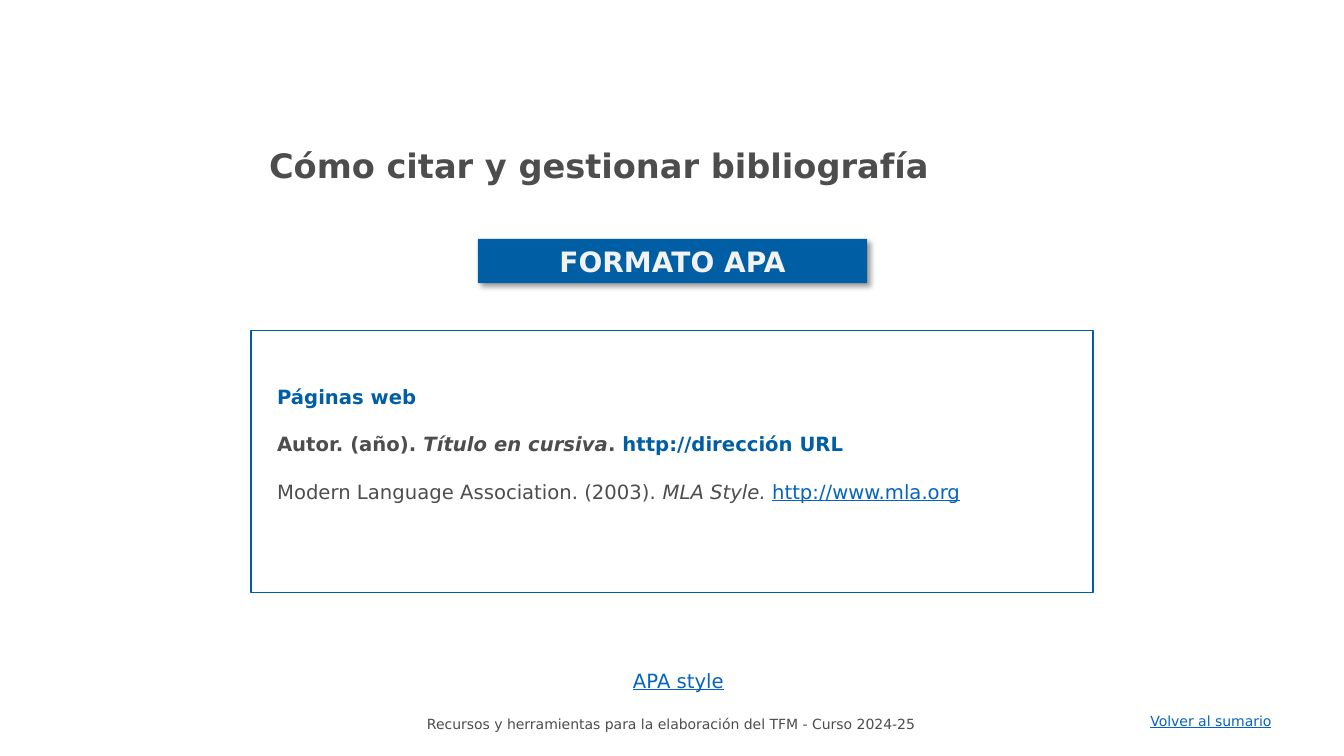
"""Build the slide on citing web pages in APA format."""
from dataclasses import dataclass

from lxml.etree import SubElement
from pptx import Presentation
from pptx.dml.color import RGBColor as Color
from pptx.enum.shapes import MSO_SHAPE as ShapeKind
from pptx.enum.text import MSO_ANCHOR as Anchor, PP_ALIGN as Align
from pptx.oxml.ns import qn
from pptx.shapes.autoshape import Shape
from pptx.slide import Slide
from pptx.util import Inches, Pt

WIDTH, HEIGHT = Inches(13.33), Inches(7.5)


@dataclass(frozen=True)
class Theme:
    font: str = "DejaVu Sans"
    blue: str = "005EA4"
    gray: str = "4D4D4D"
    link: str = "0563C1"
    pale: str = "F2F2F2"
    shadow: str = "000000"
    title: int = 24
    banner: int = 20
    body: int = 14
    small: int = 10
    gap: int = 17


THEME = Theme()


@dataclass(frozen=True)
class Area:
    """A rectangle in percent of the slide's width and height."""
    left: float
    top: float
    width: float
    height: float

    def box(self) -> tuple[int, int, int, int]:
        return (round(WIDTH * self.left / 100), round(HEIGHT * self.top / 100),
                round(WIDTH * self.width / 100), round(HEIGHT * self.height / 100))


@dataclass(frozen=True)
class Span:
    text: str
    color: str = THEME.gray
    bold: bool = False
    italic: bool = False
    underline: bool = False


@dataclass(frozen=True)
class TextBlock:
    area: Area
    size: int
    paragraphs: list[list[Span]]
    align: Align = Align.LEFT
    wrap: bool = True


FRAME = Area(18.68, 43.73, 62.64, 34.67)
BANNER = TextBlock(Area(35.56, 31.6, 28.96, 5.87), THEME.banner,
                   [[Span("FORMATO APA", THEME.pale, bold=True)]], Align.CENTER)
BLOCKS = [
    TextBlock(Area(20.1, 94, 59.64, 3.6), THEME.small,
              [[Span("Recursos y herramientas para la elaboración del TFM - Curso 2024-25")]],
              Align.CENTER),
    TextBlock(Area(84.85, 93.6, 10.8, 3.6), THEME.small,
              [[Span("Volver al sumario", THEME.link, underline=True)]], wrap=False),
    TextBlock(Area(19.88, 50.27, 60.24, 17.07), THEME.body, [
        [Span("Páginas web", THEME.blue, bold=True)],
        [Span("Autor. (año). ", bold=True),
         Span("Título en cursiva", bold=True, italic=True),
         Span(". ", bold=True),
         Span("http://dirección URL", THEME.blue, bold=True)],
        [Span("Modern Language Association. (2003). "),
         Span("MLA Style. ", italic=True),
         Span("http://www.mla.org", THEME.link, underline=True)],
    ]),
    TextBlock(Area(46.36, 87.87, 8.4, 4.53), THEME.body,
              [[Span("APA style", THEME.link, underline=True)]], wrap=False),
    TextBlock(Area(19.28, 18.53, 62.64, 6.67), THEME.title,
              [[Span("Cómo citar y gestionar bibliografía", bold=True)]]),
]


def write_text(shape: Shape, block: TextBlock) -> None:
    frame = shape.text_frame
    frame.word_wrap = block.wrap
    for index, spans in enumerate(block.paragraphs):
        paragraph = frame.add_paragraph() if index else frame.paragraphs[0]
        paragraph.alignment = block.align
        if index:
            paragraph.space_before = Pt(THEME.gap)
        for span in spans:
            run = paragraph.add_run()
            run.text = span.text
            font = run.font
            font.name, font.size = THEME.font, Pt(block.size)
            font.bold, font.italic, font.underline = span.bold, span.italic, span.underline
            font.color.rgb = Color.from_string(span.color)


def add_rectangle(slide: Slide, area: Area) -> Shape:
    shape = slide.shapes.add_shape(ShapeKind.RECTANGLE, *area.box())
    shape.shadow.inherit = False
    return shape


def add_frame(slide: Slide) -> None:
    shape = add_rectangle(slide, FRAME)
    shape.fill.background()
    shape.line.color.rgb = Color.from_string(THEME.blue)
    shape.line.width = Pt(1)


def cast_shadow(shape: Shape) -> None:
    effects = shape._element.spPr.find(qn("a:effectLst"))
    shadow = SubElement(effects, qn("a:outerShdw"), blurRad=str(Pt(4)), dist=str(Pt(3)),
                        dir=str(45 * 60000), algn="tl", rotWithShape="0")
    color = SubElement(shadow, qn("a:srgbClr"), val=THEME.shadow)
    SubElement(color, qn("a:alpha"), val="40000")


def add_banner(slide: Slide) -> None:
    shape = add_rectangle(slide, BANNER.area)
    shape.fill.solid()
    shape.fill.fore_color.rgb = Color.from_string(THEME.blue)
    shape.line.fill.background()
    cast_shadow(shape)
    shape.text_frame.vertical_anchor = Anchor.MIDDLE
    write_text(shape, BANNER)


def main() -> None:
    presentation = Presentation()
    presentation.slide_width, presentation.slide_height = WIDTH, HEIGHT
    slide = presentation.slides.add_slide(presentation.slide_layouts[6])
    add_frame(slide)
    for block in BLOCKS:
        write_text(slide.shapes.add_textbox(*block.area.box()), block)
    add_banner(slide)
    presentation.save("out.pptx")


if __name__ == "__main__":
    main()
